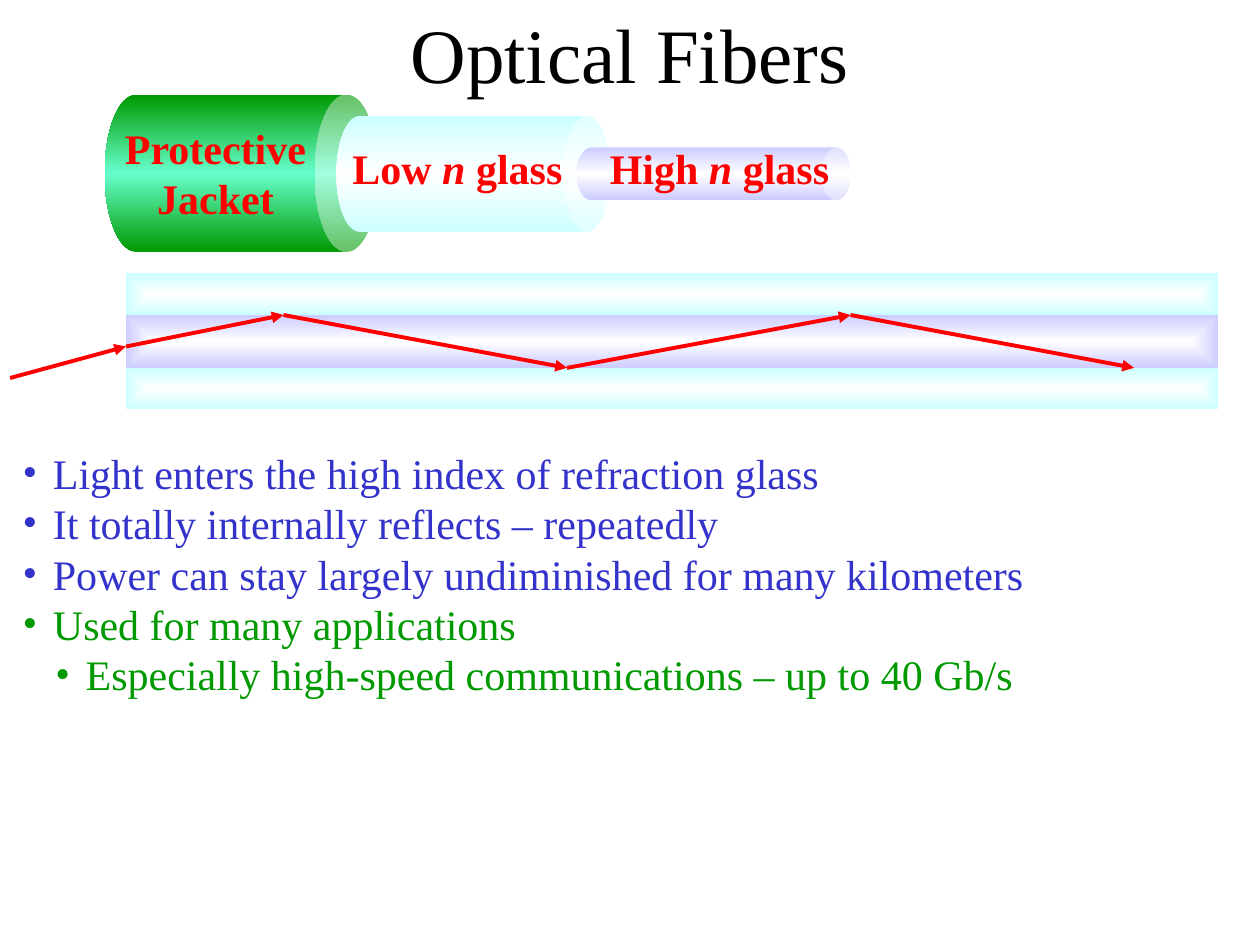
from itertools import pairwise

from lxml import etree
from pptx import Presentation
from pptx.dml.color import RGBColor
from pptx.enum.shapes import MSO_CONNECTOR, MSO_SHAPE
from pptx.enum.text import MSO_ANCHOR, MSO_AUTO_SIZE, PP_ALIGN
from pptx.oxml import parse_xml
from pptx.oxml.ns import nsdecls, qn
from pptx.util import Inches, Pt

CAN, RECTANGLE = MSO_SHAPE.CAN, MSO_SHAPE.RECTANGLE
STRAIGHT = MSO_CONNECTOR.STRAIGHT
TOP, NO_AUTOFIT = MSO_ANCHOR.TOP, MSO_AUTO_SIZE.NONE
CENTER, LEFT = PP_ALIGN.CENTER, PP_ALIGN.LEFT

FONT = "Times New Roman"
BLACK, RED, BLUE, GREEN = "000000", "FF0000", "3333CC", "009900"
WHITE, MINT, CYAN, LAVENDER = "FFFFFF", "66FFCC", "CCFFFF", "CCCCFF"

LINEAR = '<a:lin ang="0" scaled="1"/>'
FROM_CENTER = ('<a:path path="shape"><a:fillToRect l="50000" t="50000" '
               'r="50000" b="50000"/></a:path>')


def color(hex_string):
    return RGBColor.from_string(hex_string)


def place(shape, left, top, width, height):
    shape.left, shape.top = Inches(left), Inches(top)
    shape.width, shape.height = Inches(width), Inches(height)


def format_font(font, size, font_color, bold=False):
    font.name, font.size, font.bold = FONT, Pt(size), bold
    font.color.rgb = color(font_color)


def prepare_frame(text_frame):
    text_frame.word_wrap = True
    text_frame.auto_size = NO_AUTOFIT
    text_frame.vertical_anchor = TOP


def add_gradient_shape(slide, kind, box, stops, direction):
    """Add a borderless shape; stops are evenly spaced colours."""
    shape = slide.shapes.add_shape(kind, *(Inches(length) for length in box))
    shape.shadow.inherit = False
    shape.line.fill.background()
    step = 100000 // (len(stops) - 1)
    stop_list = "".join(
        f'<a:gs pos="{index * step}"><a:srgbClr val="{stop}"/></a:gs>'
        for index, stop in enumerate(stops))
    gradient = parse_xml(
        f'<a:gradFill {nsdecls("a")} rotWithShape="1">'
        f'<a:gsLst>{stop_list}</a:gsLst>{direction}</a:gradFill>')
    shape._element.spPr.find(qn("a:prstGeom")).addnext(gradient)
    return shape


def add_title(slide, text, box):
    title = slide.shapes.title
    place(title, *box)
    prepare_frame(title.text_frame)
    title.text_frame.text = text
    paragraph = title.text_frame.paragraphs[0]
    paragraph.alignment = CENTER
    format_font(paragraph.runs[0].font, 44, BLACK)


def add_cylinder(slide, box, edge, middle, adjustment):
    """Add a can lying on its side, so that it fills the given box."""
    left, top, width, height = box
    shift = (width - height) / 2
    upright_box = (left + shift, top - shift, height, width)
    can = add_gradient_shape(slide, CAN, upright_box, (edge, middle, edge), LINEAR)
    can.rotation = 90
    can.adjustments[0] = adjustment


def add_label(slide, box, parts):
    """Add a red label whose every second part is italic."""
    label = slide.shapes.add_textbox(*(Inches(length) for length in box))
    prepare_frame(label.text_frame)
    paragraph = label.text_frame.paragraphs[0]
    paragraph.alignment = CENTER
    for index, part in enumerate(parts):
        run = paragraph.add_run()
        run.text = part
        format_font(run.font, 24, RED, bold=True)
        run.font.italic = index % 2 == 1


def add_fiber_layers(slide, left, top):
    width = 2.17
    add_cylinder(slide, (left, top, width, 1.25), GREEN, MINT, 0.403)
    add_label(slide, (left - 0.08, top + 0.17, 1.92, 0.9), ["Protective Jacket"])
    add_cylinder(slide, (left + 1.84, top + 0.17, width, 0.92), CYAN, WHITE, 0.398)
    add_cylinder(slide, (left + 3.75, top + 0.42, width, 0.42), LAVENDER, WHITE, 0.542)
    add_label(slide, (left + 1.84, top + 0.33, 1.92, 0.5), ["Low ", "n", " glass"])
    add_label(slide, (left + 3.84, top + 0.33, 2.08, 0.5), ["High ", "n", " glass"])


def add_ray(slide, start, end):
    ray = slide.shapes.add_connector(
        STRAIGHT, *(Inches(length) for length in (*start, *end)))
    ray.line.color.rgb = color(RED)
    ray.line.width = Pt(2.25)
    etree.SubElement(ray.line._get_or_add_ln(), qn("a:tailEnd"), type="triangle")
    etree.SubElement(ray._element.spPr, qn("a:effectLst"))


def add_light_path(slide, left, top, width):
    """Draw the cut fiber and the ray that bounces along its core."""
    cladding, core = 0.33, 0.42
    core_top = top + cladding
    core_bottom = core_top + core
    for layer_top, height, edge in ((top, cladding, CYAN),
                                    (core_bottom, cladding, CYAN),
                                    (core_top, core, LAVENDER)):
        add_gradient_shape(slide, RECTANGLE, (left, layer_top, width, height),
                           (WHITE, edge), FROM_CENTER)
    bounces = [(left + 1.25 + 2.25 * index, (core_top, core_bottom)[index % 2])
               for index in range(4)]
    points = [(left - 0.92, core_top + 0.5), (left, core_top + 0.25), *bounces]
    for start, end in pairwise(points):
        add_ray(slide, start, end)


def add_bullets(slide, box, items):
    body = slide.placeholders[1]
    place(body, *box)
    text_frame = body.text_frame
    prepare_frame(text_frame)
    text_frame.text = "\n".join(text for text, _, _ in items)
    for paragraph, (_, level, text_color) in zip(text_frame.paragraphs, items):
        paragraph.level = level
        paragraph.alignment = LEFT
        paragraph.space_before = Pt(0)
        properties = paragraph._p.get_or_add_pPr()
        properties.set("marL", str(Inches((0.24, 0.5)[level])))
        properties.set("indent", str(Inches(-0.24)))
        etree.SubElement(properties, qn("a:buFont"), typeface=FONT)
        etree.SubElement(properties, qn("a:buChar"), char="•")
        format_font(paragraph.runs[0].font, 24, text_color)


def main():
    presentation = Presentation()
    presentation.slide_width, presentation.slide_height = Inches(10), Inches(7.5)
    slide = presentation.slides.add_slide(presentation.slide_layouts[1])
    add_title(slide, "Optical Fibers", (0, 0, 10, 0.83))
    add_fiber_layers(slide, 0.83, 0.75)
    add_light_path(slide, 1, 2.17, 8.67)
    add_bullets(slide, (0.08, 3.5, 9.92, 2.1), [
        ("Light enters the high index of refraction glass", 0, BLUE),
        ("It totally internally reflects – repeatedly", 0, BLUE),
        ("Power can stay largely undiminished for many kilometers", 0, BLUE),
        ("Used for many applications", 0, GREEN),
        ("Especially high-speed communications – up to 40 Gb/s", 1, GREEN),
    ])
    presentation.save("out.pptx")


if __name__ == "__main__":
    main()
